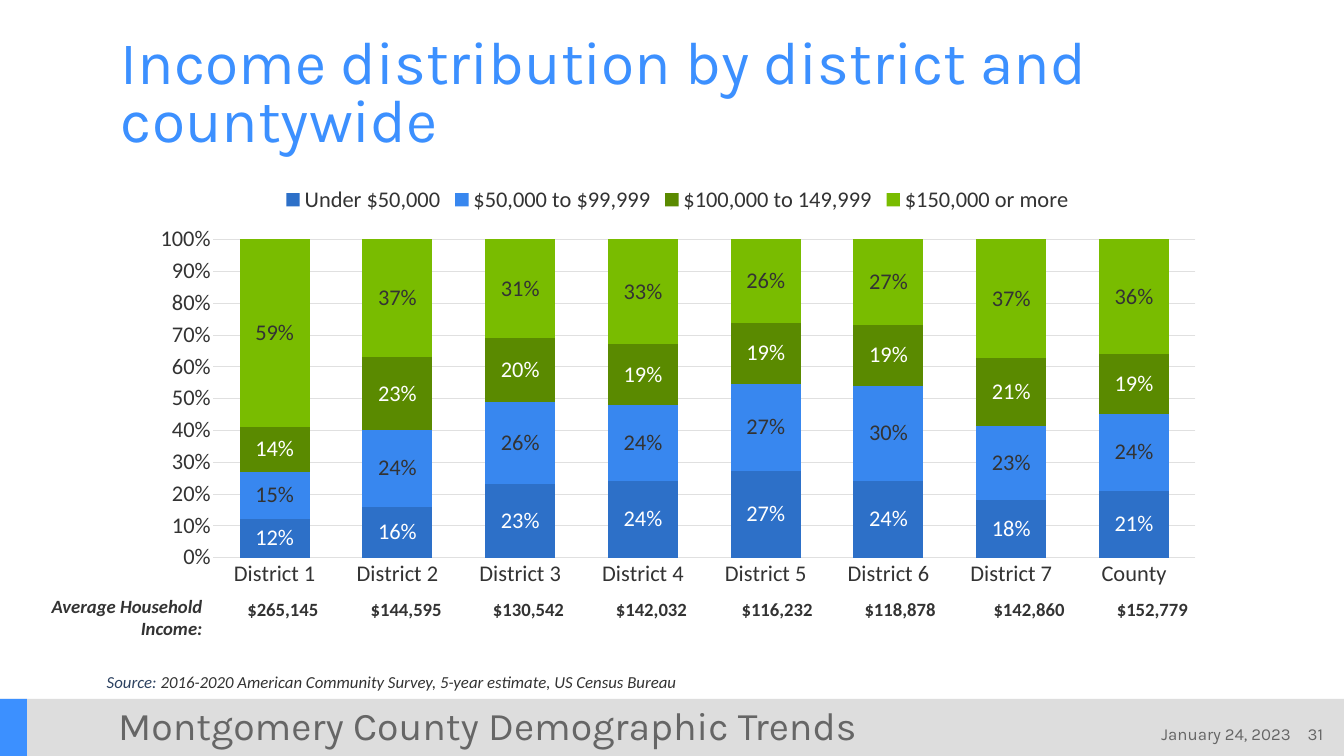
from dataclasses import dataclass

import pptx
import pptx.chart.data
import pptx.dml.color
import pptx.enum.chart
import pptx.enum.shapes
import pptx.enum.text
import pptx.oxml
import pptx.oxml.ns
import pptx.util
from pptx.util import Inches

ALIGN = pptx.enum.text.PP_ALIGN
ANCHOR = pptx.enum.text.MSO_ANCHOR


@dataclass(frozen=True)
class Theme:
    """Colours, fonts and type sizes of the deck."""
    heading: str = "Karla"
    body: str = "Calibri"
    accent: str = "3C90FF"
    band: str = "DDDDDD"
    muted: str = "666666"
    ink: str = "333333"
    navy: str = "2D4261"
    white: str = "FFFFFF"
    grid: str = "E0E0E0"
    title_size: float = 64.8
    footer_size: float = 42
    chart_size: float = 24
    income_size: float = 20
    small_size: float = 18


THEME = Theme()
CATEGORIES = [f"District {number}" for number in range(1, 8)] + ["County"]
SERIES = [
    ("Under $50,000", "2D70C8", THEME.white, (0.12, 0.16, 0.23, 0.24, 0.27, 0.24, 0.18, 0.21)),
    ("$50,000 to $99,999", "3887EF", THEME.ink, (0.15, 0.24, 0.26, 0.24, 0.27, 0.3, 0.23, 0.24)),
    ("$100,000 to 149,999", "5A8A00", THEME.white, (0.14, 0.23, 0.2, 0.19, 0.19, 0.19, 0.21, 0.19)),
    ("$150,000 or more", "79BC00", THEME.ink, (0.59, 0.37, 0.31, 0.33, 0.26, 0.27, 0.37, 0.36)),
]
INCOMES = ["$265,145", "$144,595", "$130,542", "$142,032",
           "$116,232", "$118,878", "$142,860", "$152,779"]
INCOME_WIDTHS = [1.86, 1.81, 1.83, 1.83, 1.91, 1.75, 2.09, 1.58]


def rgb(color):
    """Turn a hex string into a colour."""
    return pptx.dml.color.RGBColor.from_string(color)


def style_font(font, size, color, name=THEME.body, bold=False, italic=False):
    """Set the face, size, colour and weight of a font."""
    font.name, font.size = name, pptx.util.Pt(size)
    font.bold, font.italic = bold, italic
    font.color.rgb = rgb(color)


def add_span(para, text, size, color, **style):
    """Append one styled run to a paragraph."""
    span = para.add_run()
    span.text = text
    style_font(span.font, size, color, **style)


def add_text_box(page, area, align=ALIGN.LEFT, anchor=ANCHOR.TOP, insets=(0.1, 0.05, 0.1, 0.05)):
    """Place a wrapping text box and return its first paragraph."""
    frame = page.shapes.add_textbox(*map(Inches, area)).text_frame
    frame.word_wrap = True
    frame.vertical_anchor = anchor
    (frame.margin_left, frame.margin_top,
     frame.margin_right, frame.margin_bottom) = map(Inches, insets)
    para = frame.paragraphs[0]
    para.alignment = align
    return para


def add_bar(page, area, color):
    """Place a plain filled rectangle."""
    bar = page.shapes.add_shape(pptx.enum.shapes.MSO_SHAPE.RECTANGLE, *map(Inches, area))
    bar.shadow.inherit = False
    bar.fill.solid()
    bar.fill.fore_color.rgb = rgb(color)
    bar.line.fill.background()


def add_footer(page, area):
    """Draw the footer band with report name, date and page number."""
    left, top, width, height = area
    add_bar(page, area, THEME.band)
    add_bar(page, (left, top, 0.4, height), THEME.accent)
    flush = (0, 0, 0, 0)
    name = add_text_box(page, (left + 1.76, top + 0.09, 16.4, 0.6), anchor=ANCHOR.MIDDLE, insets=flush)
    add_span(name, "Montgomery County Demographic Trends", THEME.footer_size, THEME.muted, name=THEME.heading)
    for text, right, span_width in (("31", 0.31, 0.97), ("January 24, 2023", 0.79, 2.81)):
        box = (left + width - right - span_width, top + 0.42, span_width, 0.25)
        para = add_text_box(page, box, ALIGN.RIGHT, ANCHOR.BOTTOM, flush)
        add_span(para, text, THEME.small_size, THEME.muted, name=THEME.heading)


def add_title(page, area):
    """Write the slide title."""
    para = add_text_box(page, area, anchor=ANCHOR.BOTTOM, insets=(0, 0.05, 0.1, 0))
    para.line_spacing = 0.8
    add_span(para, "Income distribution by district and countywide",
             THEME.title_size, THEME.accent, name=THEME.heading)


def fix_plot_area(chart, left, top, width, height):
    """Pin the inner plot area to fractions of the chart."""
    plot_area = chart.element.find(".//" + pptx.oxml.ns.qn("c:plotArea"))
    for layout in plot_area.findall(pptx.oxml.ns.qn("c:layout")):
        plot_area.remove(layout)
    places = "".join(f'<c:{tag} val="{value}"/>'
                     for tag, value in zip("xywh", (left, top, width, height)))
    plot_area.insert(0, pptx.oxml.parse_xml(
        f'<c:layout {pptx.oxml.ns.nsdecls("c")}><c:manualLayout><c:layoutTarget val="inner"/>'
        f'<c:xMode val="edge"/><c:yMode val="edge"/>{places}</c:manualLayout></c:layout>'))


def style_axes(chart):
    """Format the category and value axes."""
    for axis in (chart.category_axis, chart.value_axis):
        axis.major_tick_mark = axis.minor_tick_mark = pptx.enum.chart.XL_TICK_MARK.NONE
        style_font(axis.tick_labels.font, THEME.chart_size, THEME.ink)
    values = chart.value_axis
    values.major_unit = 0.1
    values.tick_labels.number_format = "0%"
    values.tick_labels.number_format_is_linked = False
    values.format.line.fill.background()
    values.has_major_gridlines = True
    for line in (chart.category_axis.format.line, values.major_gridlines.format.line):
        line.color.rgb = rgb(THEME.grid)
        line.width = pptx.util.Pt(0.75)


def add_income_chart(page, area):
    """Draw the stacked income shares by district."""
    data = pptx.chart.data.CategoryChartData(number_format="0%")
    data.categories = CATEGORIES
    for name, _, _, shares in SERIES:
        data.add_series(name, shares)
    kind = pptx.enum.chart.XL_CHART_TYPE.COLUMN_STACKED_100
    chart = page.shapes.add_chart(kind, *map(Inches, area), data).chart
    style_font(chart.font, THEME.chart_size, THEME.ink)
    chart.has_title = False
    chart.has_legend = True
    chart.legend.position = pptx.enum.chart.XL_LEGEND_POSITION.TOP
    chart.legend.include_in_layout = False
    style_font(chart.legend.font, THEME.chart_size, THEME.ink)
    style_axes(chart)
    plot = chart.plots[0]
    plot.gap_width, plot.overlap, plot.vary_by_categories = 75, 100, False
    for series, (_, fill, label_color, _) in zip(plot.series, SERIES):
        series.format.fill.solid()
        series.format.fill.fore_color.rgb = rgb(fill)
        labels = series.data_labels
        labels.show_value = True
        labels.number_format, labels.number_format_is_linked = "0%", False
        style_font(labels.font, THEME.chart_size, label_color)
    fix_plot_area(chart, 0.07, 0.15, 0.91, 0.76)


def add_income_row(page, area):
    """Set the average incomes in a one-row table with its label."""
    left, top, width, height = area
    label = add_text_box(page, (left, top, 2.85, 0.77), ALIGN.RIGHT)
    add_span(label, "Average Household Income:", THEME.income_size, THEME.ink, bold=True, italic=True)
    table_box = (left + 3.02, top + 0.06, width - 3.02, height)
    table = page.shapes.add_table(1, len(INCOMES), *map(Inches, table_box)).table
    table.first_row = table.horz_banding = False
    for column, column_width, cell, income in zip(table.columns, INCOME_WIDTHS, table.rows[0].cells, INCOMES):
        column.width = Inches(column_width)
        cell.fill.background()
        para = cell.text_frame.paragraphs[0]
        para.alignment = ALIGN.CENTER
        add_span(para, income, THEME.income_size, THEME.ink, bold=True)


def add_source(page, area):
    """Credit the data source."""
    para = add_text_box(page, area)
    add_span(para, "Source: ", THEME.small_size, THEME.navy, italic=True)
    add_span(para, "2016-2020 American Community Survey, 5-year estimate, US Census Bureau",
             THEME.small_size, THEME.ink, italic=True)


def main():
    """Build and save the deck."""
    deck = pptx.Presentation()
    deck.slide_width, deck.slide_height = Inches(20), Inches(11.25)
    page = deck.slides.add_slide(deck.slide_layouts[6])
    add_footer(page, (0, 10.4, 20, 0.85))
    add_title(page, (1.8, 0.5, 16.4, 1.8))
    add_income_chart(page, (2.05, 2.63, 16.06, 6.23))
    add_income_row(page, (0.26, 8.8, 17.68, 0.53))
    add_source(page, (1.49, 9.95, 9.13, 0.71))
    deck.save("out.pptx")


if __name__ == "__main__":
    main()
